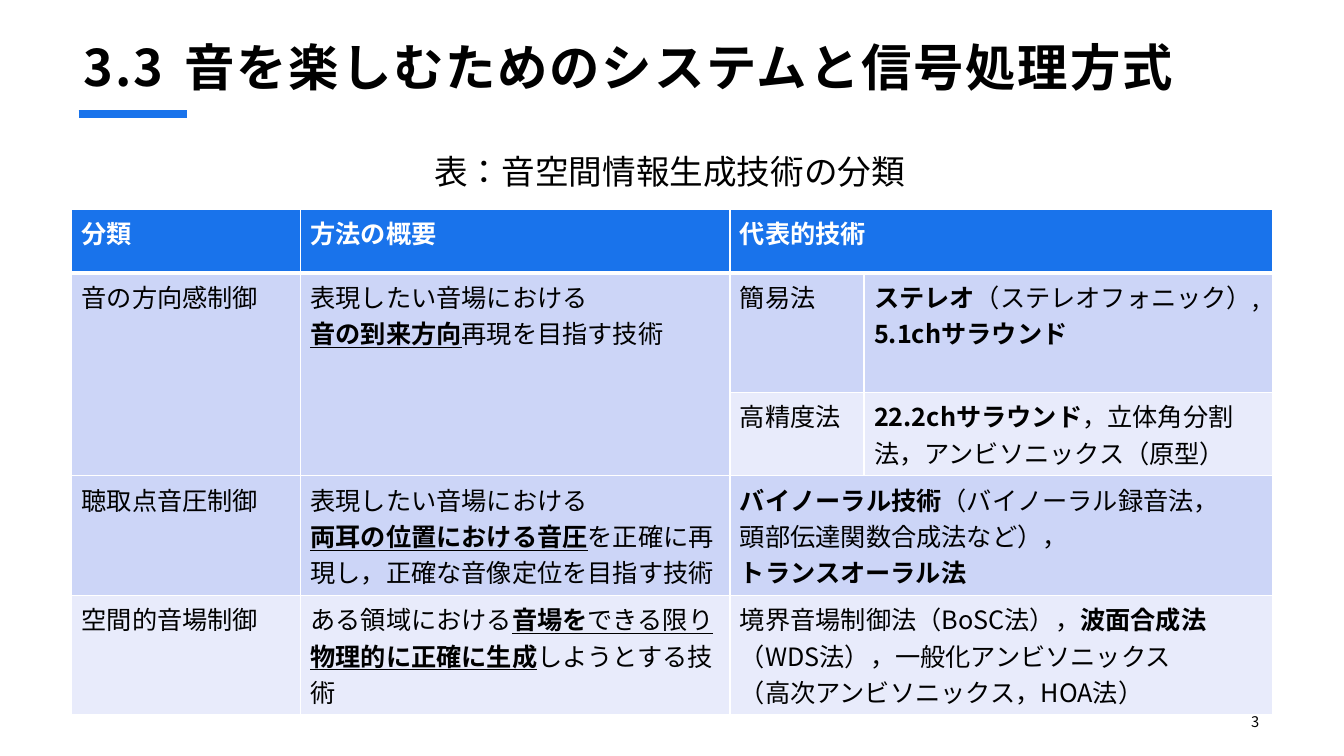
from lxml import etree
from pptx import Presentation
from pptx import util as u
from pptx.dml.color import RGBColor
from pptx.enum import shapes, text
from pptx.oxml import ns

FONT = "Noto Sans CJK JP"
HUES = {"blue": "1973EB", "mid": "CCD5F7", "pale": "E8EBFB",
        "white": "FFFFFF", "black": "000000"}


def write(frame, paras, size=18, hue="black", align=text.PP_ALIGN.LEFT, gap=0, lead=None):
    """Fill a frame; each paragraph lists (text, marks) runs, marks being b and/or u."""
    for i, runs in enumerate(paras):
        para = frame.add_paragraph() if i else frame.paragraphs[0]
        para.alignment = align
        para._p.get_or_add_pPr().set("hangingPunct", "0")
        if lead:
            para.line_spacing = lead
        for words, marks in runs:
            run = para.add_run()
            run.text = words
            font = run.font
            font.name, font.size = FONT, u.Pt(size)
            font.bold, font.underline = "b" in marks, "u" in marks
            font.color.rgb = RGBColor.from_string(HUES[hue])
            props = run._r.get_or_add_rPr()
            props.set("lang", "ja-JP")
            etree.SubElement(props, ns.qn("a:ea"), typeface=FONT)
            if gap:
                props.set("spc", str(round(gap * 100)))


def inset(frame, anchor):
    """Set the margins shared by the title and the page number."""
    frame.word_wrap = True
    frame.auto_size = text.MSO_AUTO_SIZE.NONE
    frame.vertical_anchor = anchor
    frame.margin_left = frame.margin_right = frame.margin_top = u.Inches(0.12)
    frame.margin_bottom = u.Inches(0.1)


deck = Presentation()
deck.slide_width, deck.slide_height = u.Inches(13.33), u.Inches(7.5)
slide = deck.slides.add_slide(deck.slide_layouts[5])

# Title and accent line
title = slide.shapes.title
title.left, title.top = u.Inches(0.71), u.Inches(0.12)
title.width, title.height = u.Inches(11.91), u.Inches(1.2)
inset(title.text_frame, text.MSO_ANCHOR.TOP)
write(title.text_frame, [[("3.3\t音を楽しむためのシステムと信号処理方式", "b")]],
      size=36, gap=1.3, lead=1.2)

bar = slide.shapes.add_connector(shapes.MSO_CONNECTOR.STRAIGHT, u.Inches(0.78),
                                 u.Inches(1.13), u.Inches(1.85), u.Inches(1.13))
bar.line.color.rgb = RGBColor.from_string(HUES["blue"])
bar.line.width = u.Pt(6)
etree.SubElement(bar._element.spPr, ns.qn("a:effectLst"))

# Table: (row, column, rows spanned, columns spanned, paragraphs)
cells = [
    (0, 0, 1, 1, [[("分類", "b")]]),
    (0, 1, 1, 1, [[("方法の概要", "b")]]),
    (0, 2, 1, 2, [[("代表的技術", "b")]]),
    (1, 0, 2, 1, [[("音の方向感制御", "")]]),
    (1, 1, 2, 1, [[("表現したい音場における", "")],
                  [("音の到来方向", "bu"), ("再現を目指す技術", "")]]),
    (1, 2, 1, 1, [[("簡易法", "")]]),
    (1, 3, 1, 1, [[("ステレオ", "b"), ("（ステレオフォニック）,", "")],
                  [("5.1chサラウンド", "b")]]),
    (2, 2, 1, 1, [[("高精度法", "")]]),
    (2, 3, 1, 1, [[("22.2chサラウンド", "b"),
                   ("，立体角分割法，アンビソニックス（原型）", "")]]),
    (3, 0, 1, 1, [[("聴取点音圧制御", "")]]),
    (3, 1, 1, 1, [[("表現したい音場における", "")],
                  [("両耳の位置における音圧", "bu"),
                   ("を正確に再現し，正確な音像定位を目指す技術", "")]]),
    (3, 2, 1, 2, [[("バイノーラル技術", "b"), ("（バイノーラル録音法，", "")],
                  [("頭部伝達関数合成法など），", "")],
                  [("トランスオーラル法", "b")]]),
    (4, 0, 1, 1, [[("空間的音場制御", "")]]),
    (4, 1, 1, 1, [[("ある領域における", ""), ("音場を", "bu"), ("できる限り", "u"),
                   ("物理的に正確に生成", "bu"), ("しようとする技術", "")]]),
    (4, 2, 1, 2, [[("境界音場制御法（BoSC法），", ""), ("波面合成法", "b"),
                   ("（WDS法），一般化アンビソニックス", "")],
                  [("（高次アンビソニックス，HOA法）", "")]]),
]
grid = slide.shapes.add_table(5, 4, u.Inches(0.71), u.Inches(2.08),
                              u.Inches(11.91), u.Inches(4.15)).table
for col, wide in zip(grid.columns, (2.27, 4.26, 1.33, 4.05)):
    col.width = u.Inches(wide)
fills = ("blue", "mid", "pale", "mid", "pale")
for r, (row, high) in enumerate(zip(grid.rows, (0.63, 0.59, 0.59, 1.17, 1.17))):
    row.height = u.Inches(high)
    for cell in row.cells:
        cell.fill.solid()
        cell.fill.fore_color.rgb = RGBColor.from_string(HUES[fills[r]])
        props = cell._tc.get_or_add_tcPr()
        for i, side in enumerate("LRTB"):
            thick = (r, side) in ((0, "B"), (1, "T"))
            edge = etree.Element(ns.qn(f"a:ln{side}"), w=str(u.Pt(3 if thick else 1)))
            paint = etree.SubElement(edge, ns.qn("a:solidFill"))
            etree.SubElement(paint, ns.qn("a:srgbClr"), val=HUES["white"])
            props.insert(i, edge)
for r, c, down, across, paras in cells:
    cell = grid.cell(r, c)
    if down * across > 1:
        cell.merge(grid.cell(r + down - 1, c + across - 1))
    write(cell.text_frame, paras, hue="black" if r else "white")

# Caption and page number
label = slide.shapes.add_textbox(u.Inches(4.21), u.Inches(1.45), u.Inches(4.91), u.Inches(0.5))
label.text_frame.word_wrap = False
label.text_frame.auto_size = text.MSO_AUTO_SIZE.SHAPE_TO_FIT_TEXT
write(label.text_frame, [[("表：音空間情報生成技術の分類", "")]], size=24)

page = slide.shapes.add_textbox(u.Inches(11.82), u.Inches(6.95), u.Inches(0.79), u.Inches(0.4))
inset(page.text_frame, text.MSO_ANCHOR.MIDDLE)
write(page.text_frame, [[("3", "")]], size=10.5, align=text.PP_ALIGN.RIGHT, gap=1)

deck.save("out.pptx")
